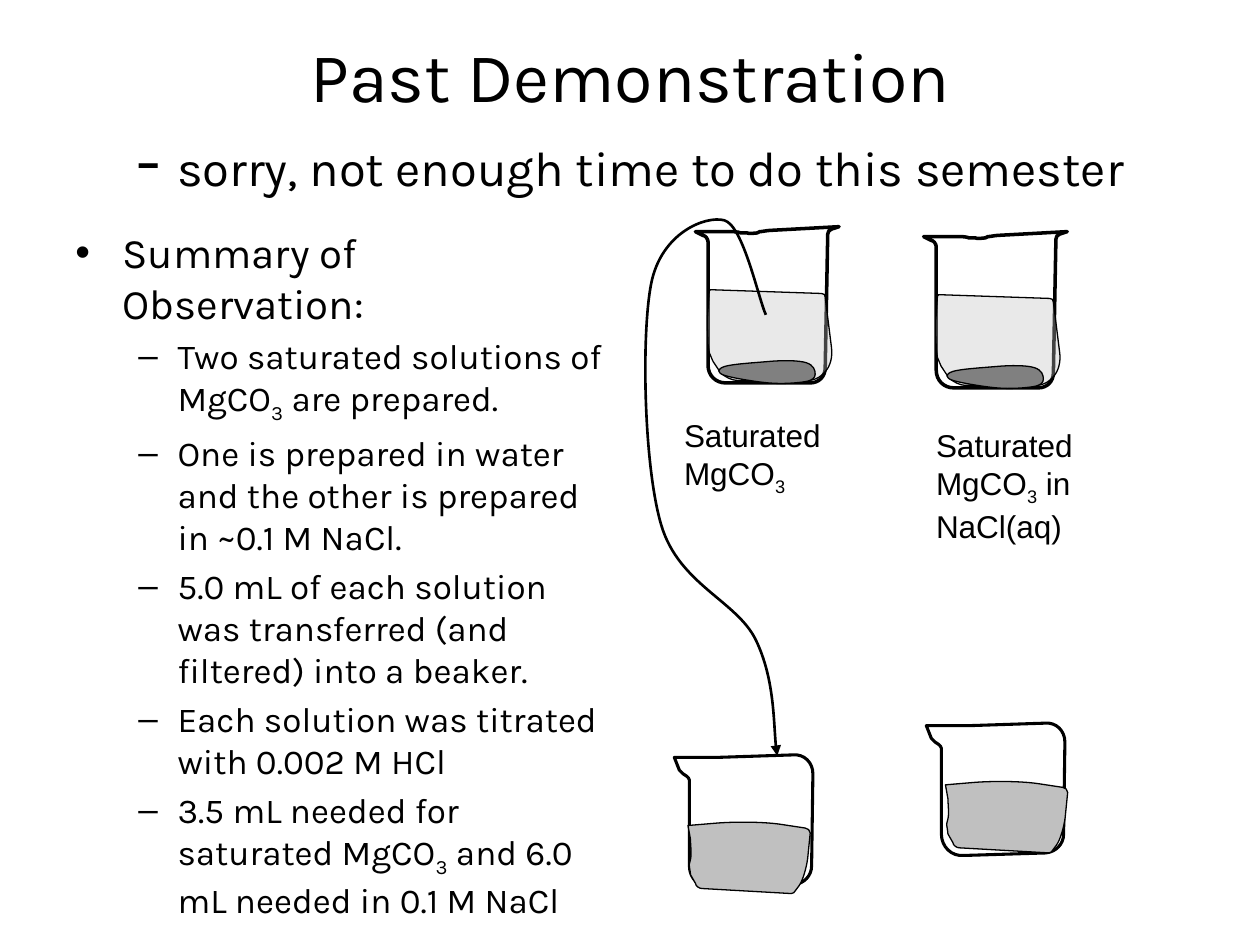
import math

import pptx
import pptx.util
import pptx.dml.color
import pptx.enum.text
import pptx.oxml.ns

COLOURS = {"ink": "000000", "liquid": "C0C0C0", "solid": "808080"}
UNIT = pptx.util.Cm(2.54) / 100
ROUNDNESS = 0.55

OBSERVATIONS = [
    ["Two saturated solutions of MgCO", "3", " are prepared."],
    ["One is prepared in water and the other is prepared in ~0.1 M NaCl."],
    ["5.0 mL of each solution was transferred (and filtered) into a beaker."],
    ["Each solution was titrated with 0.002 M HCl"],
    ["3.5 mL needed for saturated MgCO", "3", " and 6.0 mL needed in 0.1 M NaCl"]]


def colour(name):
    return pptx.dml.color.RGBColor.from_string(COLOURS[name])


def add_child(parent, tag, **attributes):
    element = parent.makeelement(pptx.oxml.ns.qn(tag), attributes)
    parent.append(element)
    return element


def between(start, end, share):
    return tuple(a + (b - a) * share for a, b in zip(start, end))


def smooth_through(anchors, closed=False):
    count = len(anchors)

    def anchor(index):
        return anchors[index % count if closed else min(max(index, 0), count - 1)]

    def handle(index, direction):
        before, after = anchor(index - 1), anchor(index + 1)
        return tuple(here + direction * (b - a) / 6
                     for here, a, b in zip(anchor(index), before, after))

    points = [anchors[0]]
    for index in range(count if closed else count - 1):
        points += [handle(index, 1), handle(index + 1, -1), anchor(index + 1)]
    return points


def round_corners(corners):
    def step_towards(corner, radius, neighbour):
        reach = min(radius / math.dist(corner, neighbour), 0.5)
        return between(corner, neighbour, reach)

    bends = []
    for index, (x, y, radius) in enumerate(corners):
        corner = x, y
        entry = step_towards(corner, radius, corners[index - 1][:2])
        leave = step_towards(corner, radius, corners[(index + 1) % len(corners)][:2])
        bends.append([entry, between(entry, corner, ROUNDNESS),
                      between(leave, corner, ROUNDNESS), leave])
    points = [bends[0][0]]
    for bend, following in zip(bends, bends[1:] + bends[:1]):
        points += bend[1:] + [bend[-1], following[0], following[0]]
    return points


def add_curve(page, left, top, points, width, fill=None, opacity=None, closed=True):
    builder = page.shapes.build_freeform(*points[0], scale=UNIT)
    builder.add_line_segments(points[1:], close=closed)
    shape = builder.convert_to_shape(left, top)
    shape.shadow.inherit = False
    lines = shape._element.findall(".//" + pptx.oxml.ns.qn("a:lnTo"))[:len(points) - 1]
    for start in range(0, len(lines), 3):
        curve = add_child(lines[start].getparent(), "a:cubicBezTo")
        lines[start].addprevious(curve)
        for line in lines[start:start + 3]:
            curve.append(line[0])
            line.getparent().remove(line)
    shape.line.color.rgb = colour("ink")
    shape.line.width = pptx.util.Pt(width)
    if fill:
        shape.fill.solid()
        shape.fill.fore_color.rgb = colour(fill)
    else:
        shape.fill.background()
    if opacity:
        tint = shape._element.spPr.find(".//" + pptx.oxml.ns.qn("a:srgbClr"))
        add_child(tint, "a:alpha", val=str(opacity * 1000))
    return shape


def add_tall_beaker(page, left, top):
    wall_left, wall_right, rim, level, foot = 10, 103, 4, 50, 124
    tip, spout, bulge = 114, 45, 110
    glass = round_corners([
        (0, rim, 0), (wall_left, rim + 4, 4), (wall_left, foot, 14),
        (wall_right, foot, 12), (wall_right + 2, rim - 1, 3), (tip, 0, 0),
        (spout + 10, rim - 1, 4), (spout, rim + 2, 4), (spout - 13, rim, 4)])
    liquid = round_corners([
        (wall_left + 1, level, 1), (wall_right, level + 3, 3), (bulge, foot - 16, 12),
        (wall_right - 7, foot - 2, 6), (wall_left + 15, foot - 2, 8),
        (wall_left + 2, foot - 20, 4), (wall_left - 1, foot - 42, 16)])
    solid = smooth_through([
        (wall_left + 13, foot - 13), (58, foot - 17), (wall_right - 15, foot - 16),
        (wall_right - 8, foot - 7), (wall_right - 16, foot - 1),
        (58, foot), (wall_left + 13, foot - 6)], closed=True)
    add_curve(page, left, top, glass, 2)
    add_curve(page, left, top, liquid, 0.75, "liquid", 35)
    add_curve(page, left, top, solid, 0.75, "solid")


def add_short_beaker(page, left, top, liquid_left, liquid_top):
    wall_left, wall_right, rim, foot, lip = 22, 120, 25, 130, 10
    glass = round_corners([
        (lip, rim + 1, 0), (lip + 5, rim + 13, 2), (wall_left, rim + 17, 2),
        (wall_left, foot, 18), (wall_right - 1, foot - 4, 14),
        (wall_right, rim - 2, 16), (wall_left + 11, rim + 1, 10)])
    width, depth = 97, 60
    liquid = round_corners([
        (0, 6, 0), (width / 2, 2, 30), (width, 8, 4), (width - 4, depth - 13, 15),
        (width - 13, depth, 2), (7, depth - 4, 4), (1, depth - 19, 4), (3, 25, 8)])
    add_curve(page, left, top, glass, 1.75)
    add_curve(page, left + liquid_left, top + liquid_top, liquid, 0.75, "liquid")


def add_tube(page, left, top):
    dip, crest, outer_bend = (100, 79), (67, 4), (9, 54)
    lower_bend, inner_bend, outlet = (17, 246), (92, 337), (109, 429)
    route = smooth_through([dip, crest, outer_bend, lower_bend, inner_bend, outlet])
    tube = add_curve(page, left, top, route, 1.5, closed=False)
    outline = tube._element.spPr.find(pptx.oxml.ns.qn("a:ln"))
    add_child(outline, "a:tailEnd", type="triangle")


def add_frame(page, left, top, width, height):
    frame = page.shapes.add_textbox(left, top, width, height).text_frame
    frame.word_wrap = True
    return frame


def set_font(target, size, face):
    target.font.size = pptx.util.Pt(size)
    target.font.name = face
    target.font.color.rgb = colour("ink")


def write_formula(para, parts, size, face):
    for index, part in enumerate(parts):
        span = para.add_run()
        span.text = part
        if index % 2:
            span.font._element.set("baseline", "-25000")
    set_font(para, size, face)


def add_title(page, left, top, width, height):
    frame = add_frame(page, left, top, width, height)
    frame.vertical_anchor = pptx.enum.text.MSO_ANCHOR.MIDDLE
    para = frame.paragraphs[0]
    para.alignment = pptx.enum.text.PP_ALIGN.CENTER
    for text, size in [("Past Demonstration\n", 40), ("- ", 40),
                       ("sorry, not enough time to do this semester", 28)]:
        span = para.add_run()
        span.text = text.rstrip("\n")
        set_font(span, size, "Karla")
        if text.endswith("\n"):
            para.add_line_break()


def set_bullet(para, symbol, margin, hanging):
    properties = para._p.get_or_add_pPr()
    properties.set("marL", str(margin))
    properties.set("indent", str(-hanging))
    add_child(properties, "a:buFont", typeface="Arial")
    add_child(properties, "a:buChar", char=symbol)


def add_summary(page, left, top, width, height):
    frame = add_frame(page, left, top, width, height)
    heading = frame.paragraphs[0]
    set_bullet(heading, "•", pptx.util.Cm(0.95), pptx.util.Cm(0.95))
    write_formula(heading, ["Summary of Observation:"], 24, "Karla")
    for parts in OBSERVATIONS:
        para = frame.add_paragraph()
        para.level = 1
        para.space_before = pptx.util.Pt(4)
        set_bullet(para, "–", pptx.util.Cm(2.06), pptx.util.Cm(0.79))
        write_formula(para, parts, 20, "Karla")


def add_label(page, left, top, width, height, parts):
    frame = add_frame(page, left, top, width, height)
    write_formula(frame.paragraphs[0], parts, 18, "Arial")


def main():
    deck = pptx.Presentation()
    deck.slide_width, deck.slide_height = pptx.util.Cm(25.4), pptx.util.Cm(19.05)
    page = deck.slides.add_slide(deck.slide_layouts[6])

    def place(add_part, *lengths, **details):
        add_part(page, *map(pptx.util.Cm, lengths), **details)

    place(add_title, 1.27, 0.76, 22.86, 3.18)
    place(add_summary, 1.27, 4.45, 11.23, 12.57)
    place(add_tall_beaker, 14.02, 4.57)
    place(add_tall_beaker, 18.62, 4.67)
    place(add_label, 13.54, 8.26, 3.38, 1.78, parts=["Saturated MgCO", "3"])
    place(add_label, 18.62, 8.46, 3.38, 2.54, parts=["Saturated MgCO", "3", " in NaCl(aq)"])
    place(add_tube, 12.9, 4.34)
    place(add_short_beaker, 13.34, 14.61, 0.53, 1.88)
    place(add_short_beaker, 18.42, 13.97, 0.64, 1.7)
    deck.save("out.pptx")


if __name__ == "__main__":
    main()
